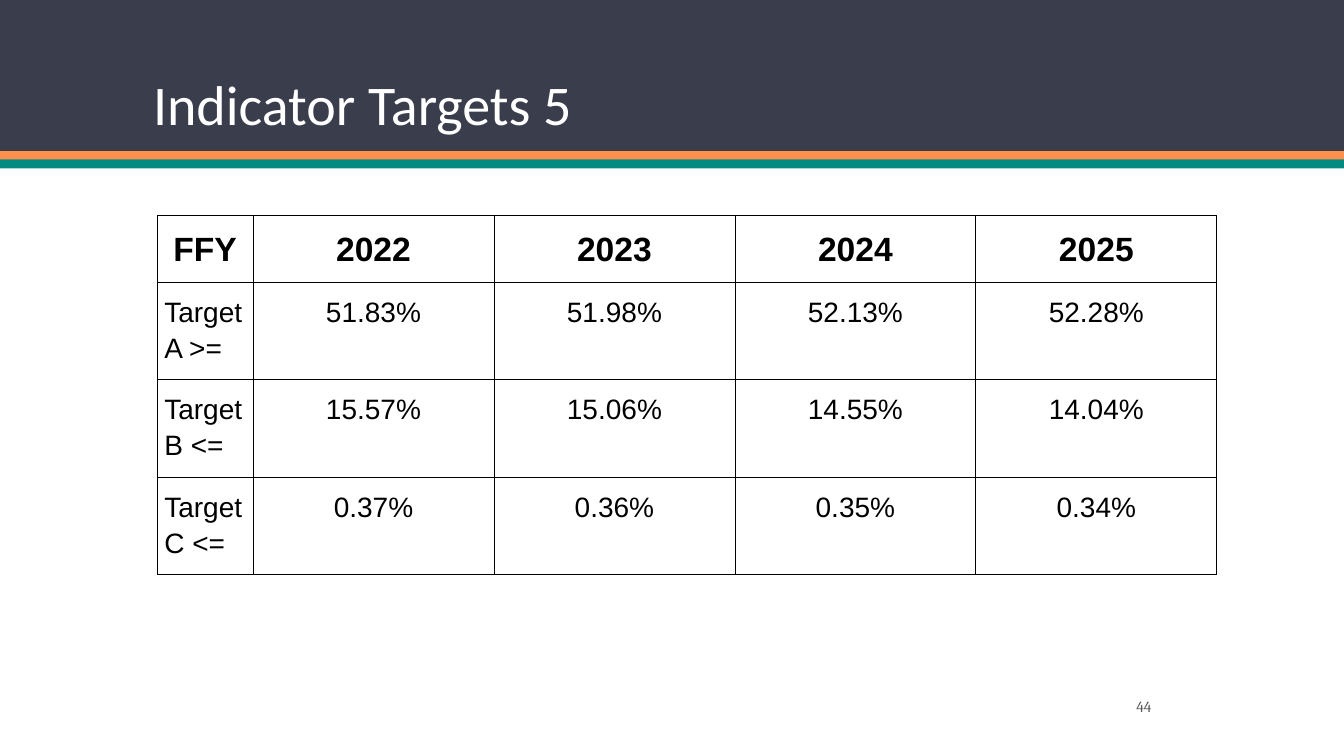
import dataclasses

import lxml.etree
import pptx
import pptx.dml.color
import pptx.enum.shapes
import pptx.enum.text
import pptx.oxml.ns
import pptx.util

Inches = pptx.util.Inches
Pt = pptx.util.Pt
Align = pptx.enum.text.PP_ALIGN
Anchor = pptx.enum.text.MSO_ANCHOR


@dataclasses.dataclass(frozen=True)
class Theme:
    navy: str = "3A3D4B"
    orange: str = "FF914D"
    teal: str = "048A81"
    white: str = "FFFFFF"
    black: str = "000000"
    gray: str = "595959"
    title: int = 40
    head: int = 24
    body: int = 20
    page: int = 11
    rule: float = 0.72


def color(code):
    return pptx.dml.color.RGBColor.from_string(code)


class Deck:
    def __init__(self, theme):
        self.theme = theme
        self.file = pptx.Presentation()
        self.file.slide_width = Inches(13.33)
        self.file.slide_height = Inches(7.5)
        self.slide = self.file.slides.add_slide(self.file.slide_layouts[6])

    def band(self, top, height, fill):
        shape = self.slide.shapes.add_shape(
            pptx.enum.shapes.MSO_SHAPE.RECTANGLE,
            0, Inches(top), self.file.slide_width, Inches(height))
        shape.shadow.inherit = False
        shape.fill.solid()
        shape.fill.fore_color.rgb = color(fill)
        shape.line.fill.background()

    def run(self, para, text, size, face, tint, bold=False):
        run = para.add_run()
        run.text = text
        run.font.size = Pt(size)
        run.font.name = face
        run.font.color.rgb = color(tint)
        run.font.bold = bold

    def text(self, box, text, size, face, tint, anchor, align, space=1.0):
        frame = self.slide.shapes.add_textbox(*map(Inches, box)).text_frame
        frame.word_wrap = True
        frame.vertical_anchor = anchor
        para = frame.paragraphs[0]
        para.alignment = align
        para.line_spacing = space
        self.run(para, text, size, face, tint)

    def border(self, cell):
        props = cell._tc.get_or_add_tcPr()
        name = pptx.oxml.ns.qn
        for spot, side in enumerate(("a:lnL", "a:lnR", "a:lnT", "a:lnB")):
            line = lxml.etree.Element(name(side), w=str(Pt(self.theme.rule)))
            fill = lxml.etree.SubElement(line, name("a:solidFill"))
            lxml.etree.SubElement(fill, name("a:srgbClr"), val=self.theme.black)
            props.insert(spot, line)

    def cell(self, cell, text, head, align):
        cell.margin_left = cell.margin_right = Inches(0.07)
        cell.margin_top = cell.margin_bottom = Inches(0.1)
        cell.fill.background()
        self.border(cell)
        para = cell.text_frame.paragraphs[0]
        para.alignment = align
        para.line_spacing = 1.15
        para.space_before = para.space_after = Pt(12)
        size = self.theme.head if head else self.theme.body
        self.run(para, text, size, "Arial", self.theme.black, head)

    def table(self, left, top, cols, rows, data):
        table = self.slide.shapes.add_table(
            len(rows), len(cols), Inches(left), Inches(top),
            Inches(sum(cols)), Inches(sum(rows))).table
        table.horz_banding = False
        for col, width in zip(table.columns, cols):
            col.width = Inches(width)
        for row, height in zip(table.rows, rows):
            row.height = Inches(height)
        for r, line in enumerate(data):
            for c, text in enumerate(line):
                align = Align.LEFT if r and not c else Align.CENTER
                self.cell(table.cell(r, c), text, r == 0, align)


def main():
    theme = Theme()
    deck = Deck(theme)
    deck.band(0, 1.5, theme.navy)
    deck.band(1.5, 0.09, theme.orange)
    deck.band(1.58, 0.09, theme.teal)
    deck.text((1.42, 0.28, 10.5, 1.13), "Indicator Targets 5", theme.title,
              "Calibri", theme.white, Anchor.BOTTOM, Align.LEFT, 0.9)
    deck.text((10.02, 6.86, 1.5, 0.3), "44", theme.page,
              "Cambria", theme.gray, Anchor.MIDDLE, Align.RIGHT)
    targets = [
        ("FFY", "2022", "2023", "2024", "2025"),
        ("Target A >=", "51.83%", "51.98%", "52.13%", "52.28%"),
        ("Target B <=", "15.57%", "15.06%", "14.55%", "14.04%"),
        ("Target C <=", "0.37%", "0.36%", "0.35%", "0.34%"),
    ]
    deck.table(1.56, 2.14, [0.95] + [2.39] * 4, [0.62] + [0.91] * 3, targets)
    deck.file.save("out.pptx")


if __name__ == "__main__":
    main()
